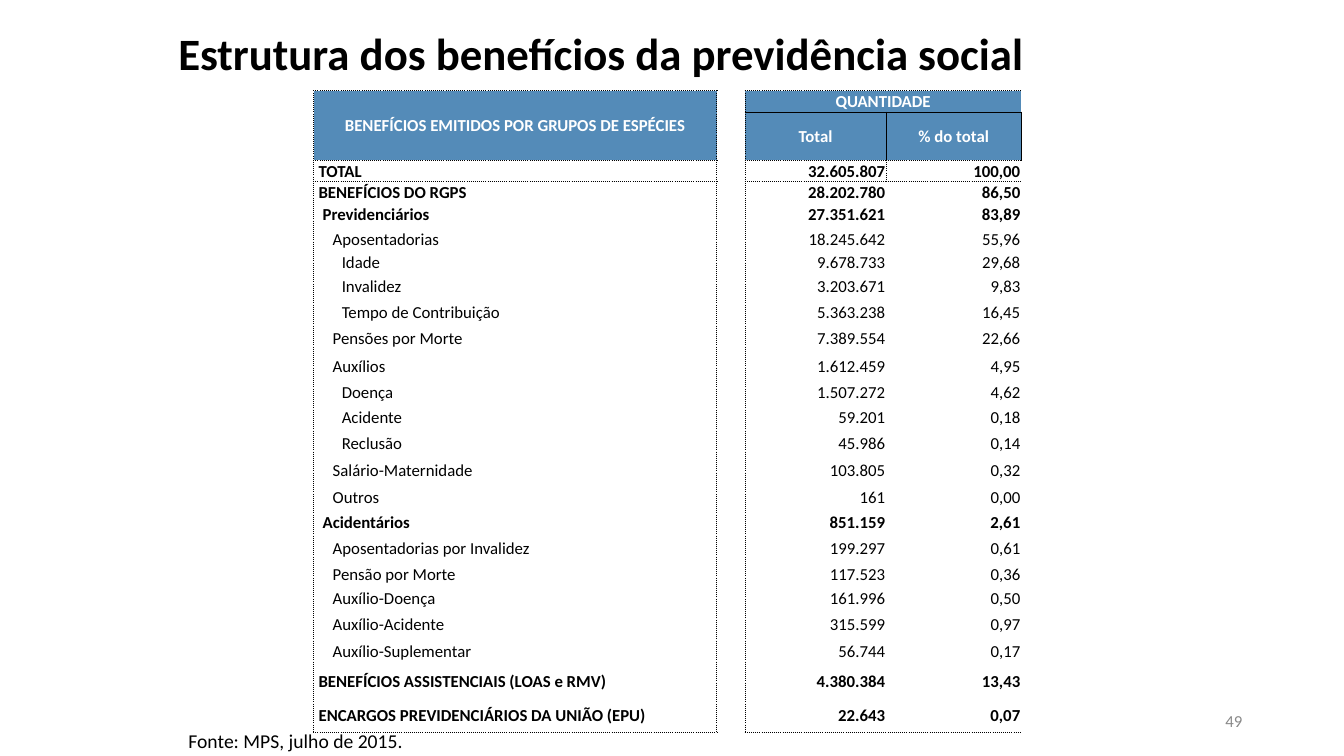
import pptx
import pptx.dml.color
import pptx.enum.text
import pptx.oxml.ns
import pptx.util
from lxml import etree

BLACK = pptx.dml.color.RGBColor(0x00, 0x00, 0x00)
WHITE = pptx.dml.color.RGBColor(0xFF, 0xFF, 0xFF)
GRAY = pptx.dml.color.RGBColor(0x89, 0x89, 0x89)
BLUE = pptx.dml.color.RGBColor(0x54, 0x8B, 0xB8)
FONT = "Calibri"
ALIGN = pptx.enum.text.PP_ALIGN
ANCHOR = pptx.enum.text.MSO_ANCHOR
INCH = pptx.util.Inches

TITLE = "Estrutura dos benefícios da previdência social"
SOURCE = "Fonte: MPS, julho de 2015."
PAGE_NUMBER = "49"

DOT, SOLID = (BLACK, "sysDot"), (BLACK, "solid")
WHITE_DOT = (WHITE, "sysDot")
HEADERS = [
    ("BENEFÍCIOS EMITIDOS POR GRUPOS DE ESPÉCIES", (0, 0), (2, 1),
     {"L": DOT, "R": DOT, "T": DOT, "B": DOT}),
    ("QUANTIDADE", (0, 3), (0, 4), {"L": DOT, "R": WHITE_DOT, "T": DOT, "B": SOLID}),
    ("Total", (1, 3), (2, 3), {"L": DOT, "R": SOLID, "T": SOLID, "B": DOT}),
    ("% do total", (1, 4), (2, 4), {"L": SOLID, "R": SOLID, "T": SOLID, "B": DOT}),
]
BENEFITS = [
    (0, "TOTAL", "32.605.807", "100,00"),
    (0, "BENEFÍCIOS DO RGPS", "28.202.780", "86,50"),
    (1, "Previdenciários", "27.351.621", "83,89"),
    (2, "Aposentadorias", "18.245.642", "55,96"),
    (3, "Idade", "9.678.733", "29,68"),
    (3, "Invalidez", "3.203.671", "9,83"),
    (3, "Tempo de Contribuição", "5.363.238", "16,45"),
    (2, "Pensões por Morte", "7.389.554", "22,66"),
    (2, "Auxílios", "1.612.459", "4,95"),
    (3, "Doença", "1.507.272", "4,62"),
    (3, "Acidente", "59.201", "0,18"),
    (3, "Reclusão", "45.986", "0,14"),
    (2, "Salário-Maternidade", "103.805", "0,32"),
    (2, "Outros", "161", "0,00"),
    (1, "Acidentários", "851.159", "2,61"),
    (2, "Aposentadorias por Invalidez", "199.297", "0,61"),
    (2, "Pensão por Morte", "117.523", "0,36"),
    (2, "Auxílio-Doença", "161.996", "0,50"),
    (2, "Auxílio-Acidente", "315.599", "0,97"),
    (2, "Auxílio-Suplementar", "56.744", "0,17"),
    (0, "BENEFÍCIOS ASSISTENCIAIS (LOAS e RMV)", "4.380.384", "13,43"),
    (0, "ENCARGOS PREVIDENCIÁRIOS DA UNIÃO (EPU)", "22.643", "0,07"),
]
LEVEL_INDENTS = [0.05, 0.09, 0.19, 0.28]
COLUMN_WIDTHS = [1.16, 2.84, 0.28, 1.4, 1.34]
HEADER_HEIGHTS = [0.21, 0.27, 0.19]
BODY_HEIGHTS = [0.21, 0.21, 0.24, 0.24, 0.23, 0.25, 0.26, 0.26, 0.28, 0.25, 0.25,
                0.26, 0.27, 0.26, 0.25, 0.26, 0.25, 0.24, 0.26, 0.28, 0.32, 0.35]
ROW_HEIGHTS = HEADER_HEIGHTS + BODY_HEIGHTS


def add_text(frame, text, size, color, bold=False, align=ALIGN.LEFT):
    paragraph = frame.paragraphs[0]
    paragraph.alignment = align
    run = paragraph.add_run()
    run.text = text
    run.font.name, run.font.size = FONT, pptx.util.Pt(size)
    run.font.bold, run.font.color.rgb = bold, color
    return paragraph


def add_label(slide, box, anchor, *text):
    frame = slide.shapes.add_textbox(*map(INCH, box)).text_frame
    frame.word_wrap, frame.vertical_anchor = True, anchor
    return add_text(frame, *text)


def set_borders(cell, borders):
    properties = cell._tc.get_or_add_tcPr()
    qn = pptx.oxml.ns.qn
    for side in "LRTB":
        if side in borders:
            color, dash = borders[side]
            line = etree.SubElement(properties, qn(f"a:ln{side}"), w="6350")
            fill = etree.SubElement(line, qn("a:solidFill"))
            etree.SubElement(fill, qn("a:srgbClr"), val=str(color))
            etree.SubElement(line, qn("a:prstDash"), val=dash)


def body_borders(row, column):
    borders = {}
    if column == 2:
        return borders
    if column in (0, 3):
        borders["L"] = DOT
    if column == 1 or (column == 0 and row > 0):
        borders["R"] = DOT
    if row == 0:
        borders["T"] = DOT
    if row == len(BENEFITS) - 1:
        borders["B"] = DOT
    return borders


def add_benefits_table(slide):
    size = (sum(COLUMN_WIDTHS), sum(ROW_HEIGHTS))
    shape = slide.shapes.add_table(len(ROW_HEIGHTS), len(COLUMN_WIDTHS),
                                   *map(INCH, (3.11, 0.9, *size)))
    table = shape.table
    table.first_row = table.horz_banding = False
    style = table._tbl.tblPr.find(pptx.oxml.ns.qn("a:tableStyleId"))
    style.text = "{2D5ABB26-0587-4C30-8999-92F81FD0307C}"
    for column, width in zip(table.columns, COLUMN_WIDTHS):
        column.width = INCH(width)
    for row, height in zip(table.rows, ROW_HEIGHTS):
        row.height = INCH(height)
    for cell in table.iter_cells():
        cell.margin_left = cell.margin_right = cell.margin_top = INCH(0.01)
        cell.margin_bottom = 0
        cell.vertical_anchor = ANCHOR.MIDDLE

    for text, (top, left), (bottom, right), borders in HEADERS:
        for row in range(top, bottom + 1):
            for column in range(left, right + 1):
                set_borders(table.cell(row, column), borders)
        cell = table.cell(top, left)
        cell.merge(table.cell(bottom, right))
        cell.fill.solid()
        cell.fill.fore_color.rgb = BLUE
        add_text(cell.text_frame, text, 12, WHITE, True, ALIGN.CENTER)

    for index, (level, name, total, share) in enumerate(BENEFITS):
        row = index + len(HEADER_HEIGHTS)
        for column in range(len(COLUMN_WIDTHS)):
            cell = table.cell(row, column)
            set_borders(cell, body_borders(index, column))
            cell.fill.background()
        name_cell = table.cell(row, 0)
        if index:
            name_cell.merge(table.cell(row, 1))
        name_cell.margin_left = INCH(LEVEL_INDENTS[level])
        bold = level < 2
        add_text(name_cell.text_frame, name, 12, BLACK, bold)
        for column, value in ((3, total), (4, share)):
            add_text(table.cell(row, column).text_frame, value, 12, BLACK, bold, ALIGN.RIGHT)

    for cell in table.iter_cells():
        if not cell.text_frame.text:
            paragraph = cell.text_frame.paragraphs[0]
            etree.SubElement(paragraph._p, pptx.oxml.ns.qn("a:endParaRPr"), sz="800")


def main():
    """Build the slide on the structure of social security benefits."""
    presentation = pptx.Presentation()
    presentation.slide_width, presentation.slide_height = INCH(13.33), INCH(7.5)
    slide = presentation.slides.add_slide(presentation.slide_layouts[6])
    title = add_label(slide, (1.67, 0.09, 10, 0.93), ANCHOR.MIDDLE, TITLE, 32, BLACK, True)
    title.line_spacing = 0.9
    add_benefits_table(slide)
    add_label(slide, (1.77, 7.18, 2.48, 0.34), ANCHOR.TOP, SOURCE, 14, BLACK)
    add_label(slide, (9.42, 6.95, 3, 0.4), ANCHOR.MIDDLE, PAGE_NUMBER, 12, GRAY, False, ALIGN.RIGHT)
    presentation.save("out.pptx")


if __name__ == "__main__":
    main()
